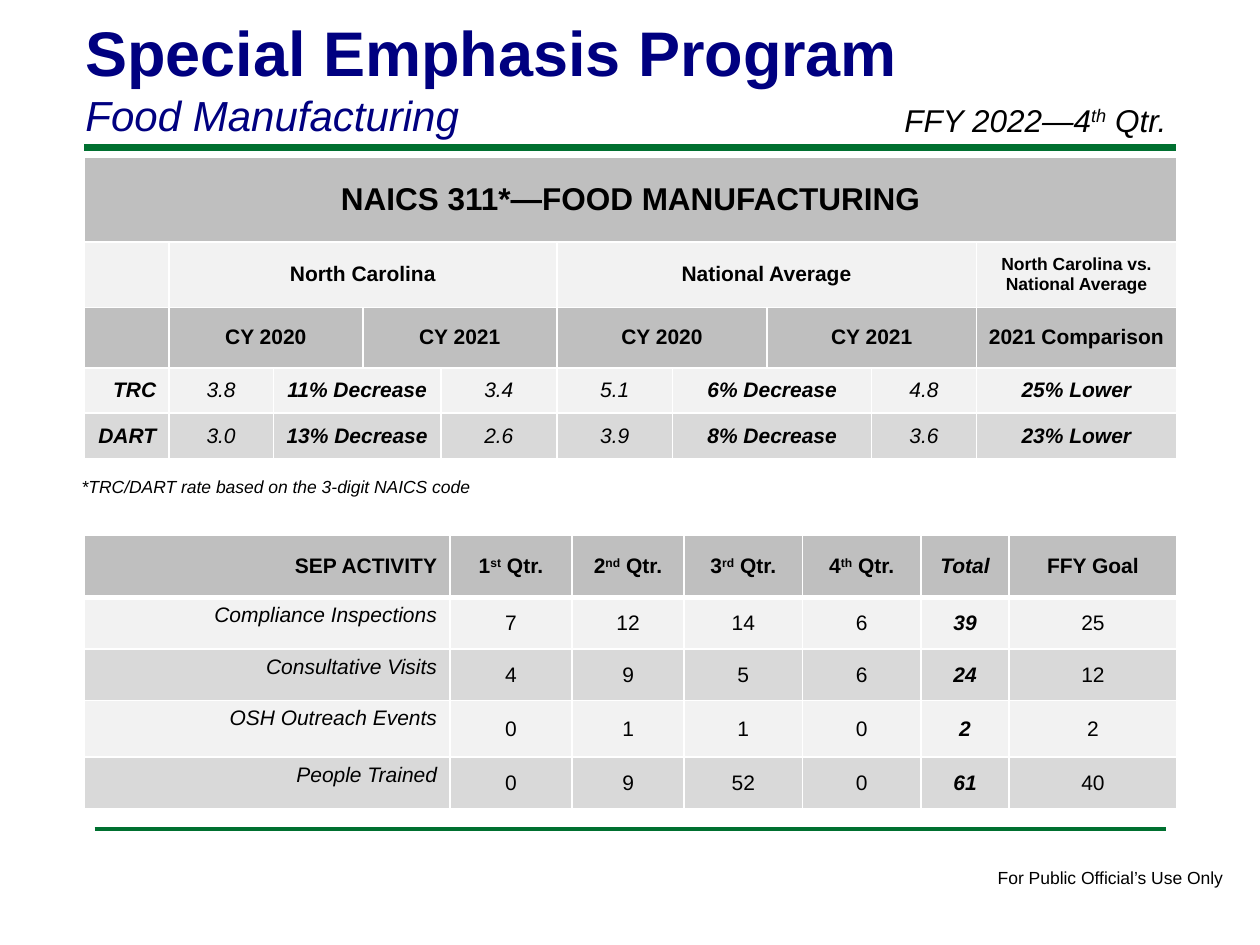
from lxml.etree import SubElement
from pptx import Presentation
from pptx.dml.color import RGBColor
from pptx.enum.shapes import MSO_CONNECTOR
from pptx.enum.text import MSO_ANCHOR, MSO_AUTO_SIZE, PP_ALIGN
from pptx.oxml.ns import qn
from pptx.util import Inches, Pt

# Content: text between carets is superscript
TITLE, SUBTITLE = "Special Emphasis Program", "Food Manufacturing"
PERIOD = "FFY 2022—4^th^ Qtr."
FOOTNOTE = "*TRC/DART rate based on the 3-digit NAICS code"
FOOTER = "For Public Official’s Use Only"

# Rate rows hold (text, columns spanned)
RATE_HEADS = [
    [("NAICS 311*—FOOD MANUFACTURING", 10)],
    [("", 1), ("North Carolina", 4), ("National Average", 4),
     ("North Carolina vs. National Average", 1)],
    [("", 1), ("CY 2020", 2), ("CY 2021", 2), ("CY 2020", 2), ("CY 2021", 2),
     ("2021 Comparison", 1)],
]
RATES = [
    ["TRC", "3.8", "11% Decrease", "3.4", "5.1", "6% Decrease", "4.8", "25% Lower"],
    ["DART", "3.0", "13% Decrease", "2.6", "3.9", "8% Decrease", "3.6", "23% Lower"],
]
RATE_SPANS = [1, 1, 2, 1, 1, 2, 1, 1]
RATE_COLS = [0.67, 0.83, 0.71, 0.62, 0.92, 0.92, 0.75, 0.83, 0.83, 1.59]
RATE_ROWS = [0.67, 0.52, 0.48, 0.36, 0.36]

ACTIVITY = [
    ["SEP ACTIVITY", "1^st^ Qtr.", "2^nd^ Qtr.", "3^rd^ Qtr.", "4^th^ Qtr.",
     "Total", "FFY Goal"],
    ["Compliance Inspections", "7", "12", "14", "6", "39", "25"],
    ["Consultative Visits", "4", "9", "5", "6", "24", "12"],
    ["OSH Outreach Events", "0", "1", "1", "0", "2", "2"],
    ["People Trained", "0", "9", "52", "0", "61", "40"],
]
ACTIVITY_COLS = [2.9, 0.97, 0.89, 0.94, 0.94, 0.7, 1.33]
ACTIVITY_ROWS = [0.49, 0.41, 0.41, 0.45, 0.41]
TOTAL = ACTIVITY[0].index("Total")

FONT = "Arial"
BLACK, WHITE, NAVY, GREEN = "000000", "FFFFFF", "000080", "007030"
HEAD, LIGHT, DARK = "BFBFBF", "F2F2F2", "D9D9D9"
LEFT = 0.67


def rgb(color):
    return RGBColor.from_string(color)


def write(paragraph, text, size, color=BLACK, bold=False, italic=False):
    for i, part in enumerate(text.split("^")):
        run = paragraph.add_run()
        run.text = part
        font = run.font
        font.name, font.size = FONT, Pt(size)
        font.bold, font.italic = bold, italic
        font.color.rgb = rgb(color)
        if i % 2:
            font._element.set("baseline", "30000")


def add_text(slide, box, lines, wrap=True):
    frame = slide.shapes.add_textbox(*map(Inches, box)).text_frame
    frame.word_wrap = wrap
    frame.auto_size = MSO_AUTO_SIZE.SHAPE_TO_FIT_TEXT
    for i, (text, style) in enumerate(lines):
        paragraph = frame.add_paragraph() if i else frame.paragraphs[0]
        write(paragraph, text, **style)


def add_rule(slide, left, right, y, width):
    rule = slide.shapes.add_connector(
        MSO_CONNECTOR.STRAIGHT, *map(Inches, (left, y, right, y)))
    rule.line.color.rgb = rgb(GREEN)
    rule.line.width = Pt(width)
    SubElement(rule._element.spPr, qn("a:effectLst"))


def add_grid(slide, top, cols, rows):
    """An unstyled table whose cells have thin white borders."""
    table = slide.shapes.add_table(
        len(rows), len(cols),
        *map(Inches, (LEFT, top, sum(cols), sum(rows)))).table
    table.first_row = table.horz_banding = False
    for col, width in zip(table.columns, cols):
        col.width = Inches(width)
    for row, height in zip(table.rows, rows):
        row.height = Inches(height)
    for cell in table.iter_cells():
        for side in "LRTB":
            line = SubElement(cell._tc.get_or_add_tcPr(), qn(f"a:ln{side}"),
                              w=str(Pt(1)))
            SubElement(SubElement(line, qn("a:solidFill")), qn("a:srgbClr"), val=WHITE)
    return table


def fill_cell(cell, text, fill, size=12, align=PP_ALIGN.CENTER,
              anchor=MSO_ANCHOR.MIDDLE, bold=False, italic=False):
    cell.fill.solid()
    cell.fill.fore_color.rgb = rgb(fill)
    cell.vertical_anchor = anchor
    paragraph = cell.text_frame.paragraphs[0]
    paragraph.alignment = align
    if text:
        write(paragraph, text, size, bold=bold, italic=italic)


def add_rates(slide):
    table = add_grid(slide, 1.25, RATE_COLS, RATE_ROWS)
    rows = RATE_HEADS + [list(zip(row, RATE_SPANS)) for row in RATES]
    fills = [HEAD, LIGHT, HEAD, LIGHT, DARK]
    for r, (row, fill) in enumerate(zip(rows, fills)):
        is_data = r >= len(RATE_HEADS)
        c = 0
        for text, span in row:
            cell = table.cell(r, c)
            if span > 1:
                cell.merge(table.cell(r, c + span - 1))
            size = 18 if r == 0 else 10 if " vs. " in text else 12
            is_rate = is_data and text[-1].isdigit()
            fill_cell(cell, text, fill, size, bold=not is_rate, italic=is_data,
                      align=PP_ALIGN.RIGHT if is_data and c == 0 else PP_ALIGN.CENTER)
            c += span


def add_activity(slide):
    table = add_grid(slide, 4.25, ACTIVITY_COLS, ACTIVITY_ROWS)
    for r, row in enumerate(ACTIVITY):
        fill = HEAD if r == 0 else LIGHT if r % 2 else DARK
        for c, text in enumerate(row):
            is_label = r > 0 and c == 0
            fill_cell(table.cell(r, c), text, fill,
                      align=PP_ALIGN.CENTER if c else PP_ALIGN.RIGHT,
                      anchor=MSO_ANCHOR.TOP if is_label else MSO_ANCHOR.MIDDLE,
                      bold=r == 0 or c == TOTAL, italic=is_label or c == TOTAL)
    # Heavier border under the header row
    for c in range(len(ACTIVITY_COLS)):
        for r, side in ((0, "B"), (1, "T")):
            line = table.cell(r, c)._tc.tcPr.find(qn(f"a:ln{side}"))
            line.set("w", str(Pt(3)))


def main():
    prs = Presentation()
    prs.slide_width, prs.slide_height = Inches(10), Inches(7.5)
    slide = prs.slides.add_slide(prs.slide_layouts[6])

    # Rules and footer
    add_rule(slide, LEFT, 9.33, 1.17, 4)
    add_rule(slide, 0.75, 9.25, 6.58, 2)
    add_text(slide, (7.82, 6.83, 2.01, 0.27), [(FOOTER, dict(size=10))], wrap=False)

    # Heading
    add_text(slide, (0.58, 0.06, 8.25, 1.11), [
        (TITLE, dict(size=36, color=NAVY, bold=True)),
        (SUBTITLE, dict(size=24, color=NAVY, italic=True))])

    # Tables and footnote
    add_text(slide, (0.55, 3.73, 3.38, 0.27),
             [(FOOTNOTE, dict(size=10, italic=True))], wrap=False)
    add_rates(slide)
    add_activity(slide)

    # Reporting period
    add_text(slide, (7.08, 0.75, 2.5, 0.4), [(PERIOD, dict(size=18, italic=True))])
    prs.save("out.pptx")


if __name__ == "__main__":
    main()
